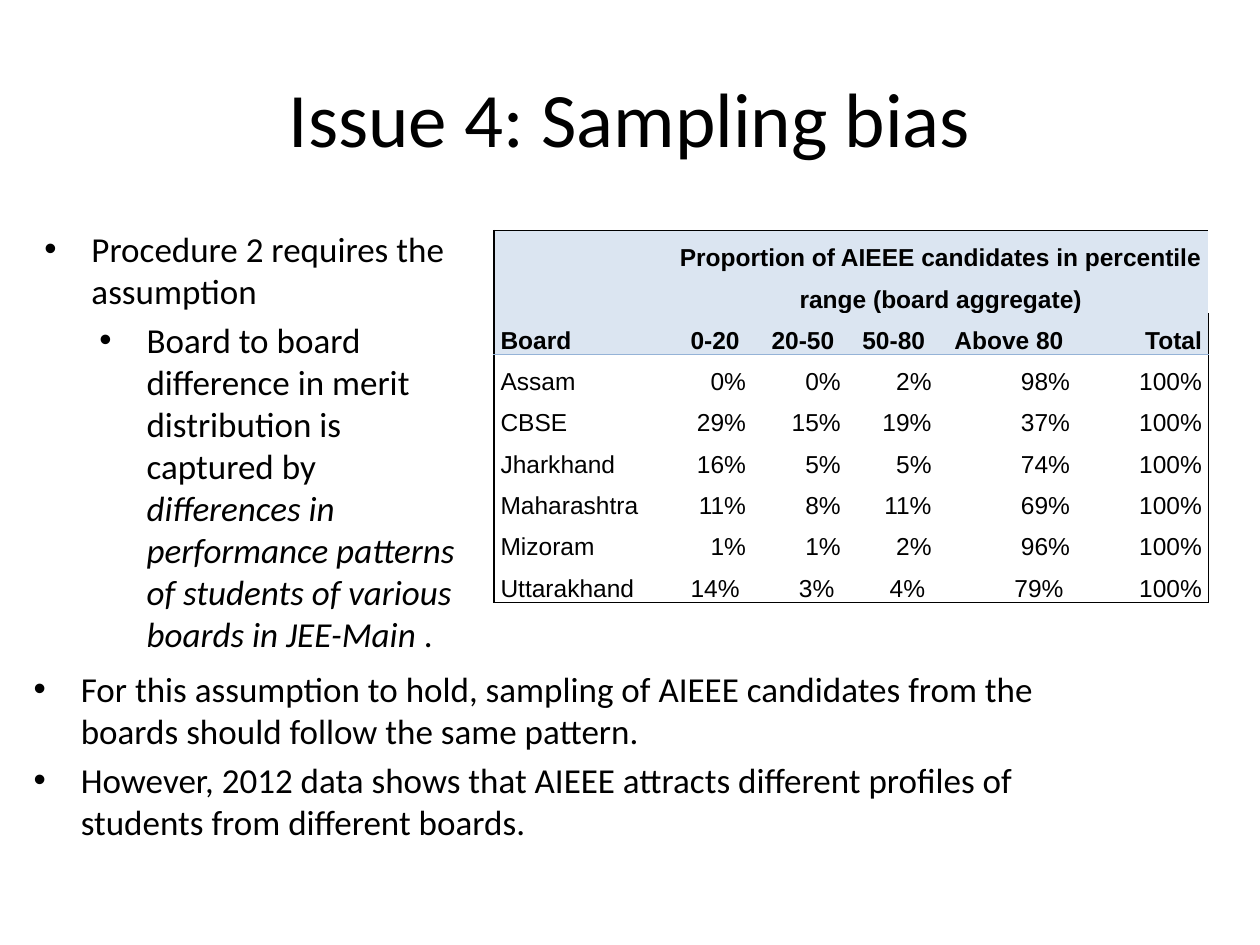
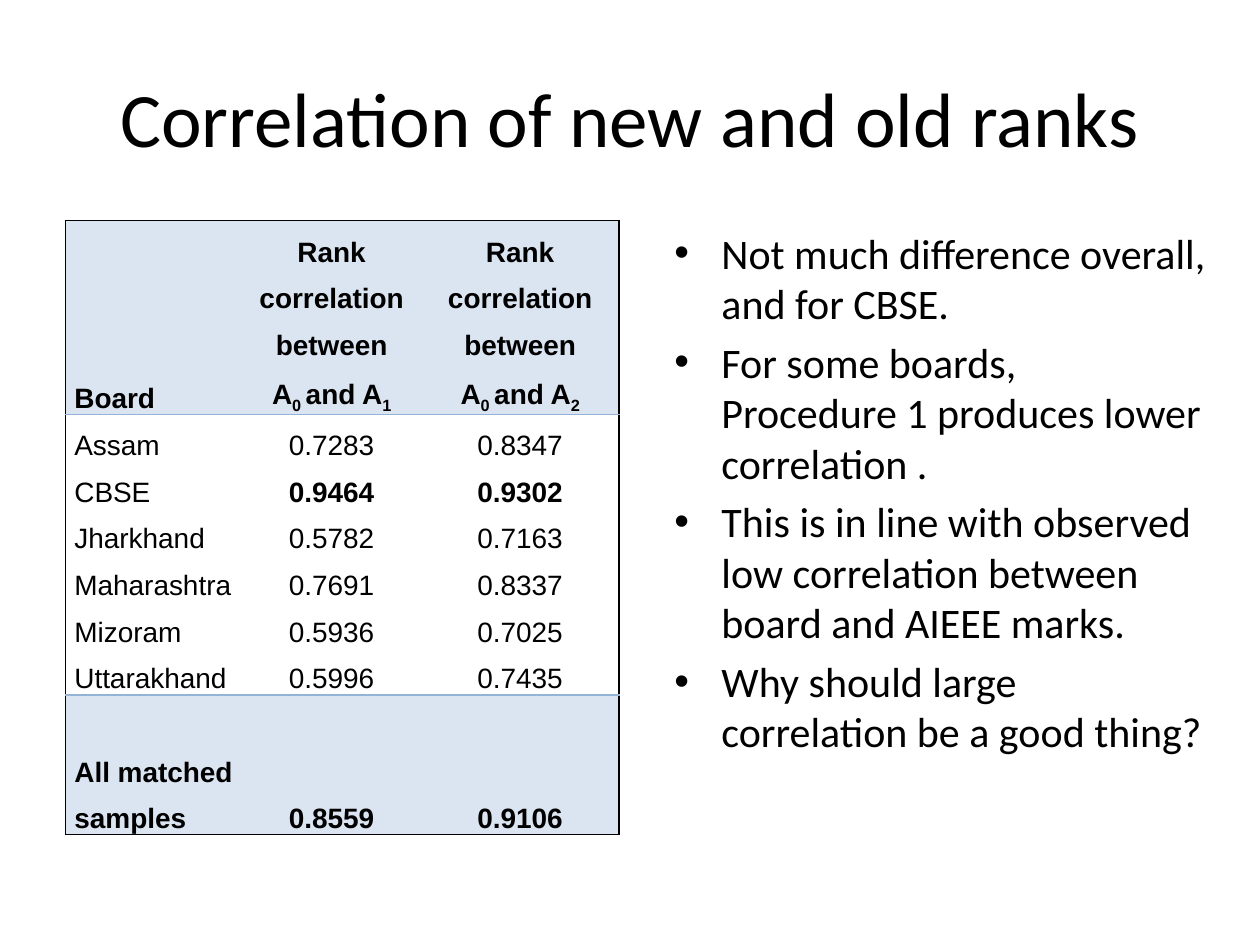
from lxml import etree
from pptx import Presentation
from pptx.dml.color import RGBColor
from pptx.enum.text import MSO_ANCHOR as Anchor, MSO_AUTO_SIZE as AutoSize, PP_ALIGN as Align
from pptx.oxml.ns import qn
from pptx.util import Cm, Pt

COLORS = {"text": "000000", "band": "DBE5F1", "frame": "000000", "rule": "95B3D7"}
TITLE_BOX = (1.27, 0.76, 22.86, 3.18)
TITLE_FONT = {"name": "Calibri", "size": Pt(44)}
INDENT = 0.95

BIAS_HEADER = ["Board", "0-20", "20-50", "50-80", "Above 80", "Total"]
BIAS_ROWS = [
    ["Assam", "0%", "0%", "2%", "98%", "100%"],
    ["CBSE", "29%", "15%", "19%", "37%", "100%"],
    ["Jharkhand", "16%", "5%", "5%", "74%", "100%"],
    ["Maharashtra", "11%", "8%", "11%", "69%", "100%"],
    ["Mizoram", "1%", "1%", "2%", "96%", "100%"],
    ["Uttarakhand", "14%", "3%", "4%", "79%", "100%"],
]
CORRELATION_ROWS = [
    ["Assam", "0.7283", "0.8347"],
    ["CBSE", "0.9464", "0.9302"],
    ["Jharkhand", "0.5782", "0.7163"],
    ["Maharashtra", "0.7691", "0.8337"],
    ["Mizoram", "0.5936", "0.7025"],
    ["Uttarakhand", "0.5996", "0.7435"],
    ["All matched samples", "0.8559", "0.9106"],
]


# Shared text helpers
def set_all(target, values):
    for key, value in values.items():
        setattr(target, key, value)


def add_runs(paragraph, parts, font):
    """Parts are a string or (text, format) pairs; a newline is a line break."""
    if isinstance(parts, str):
        parts = [(parts, {})]
    for text, extra in parts:
        for number, line in enumerate(text.split("\n")):
            if number:
                paragraph.add_line_break()
            run = paragraph.add_run()
            run.text = line
            style = {**font, **extra}
            baseline = style.pop("baseline", None)
            set_all(run.font, style)
            run.font.color.rgb = RGBColor.from_string(COLORS["text"])
            if baseline:
                run._r.get_or_add_rPr().set("baseline", baseline)


def place(shape, box):
    set_all(shape, dict(zip(("left", "top", "width", "height"), map(Cm, box))))


def add_title(slide, text):
    place(slide.shapes.title, TITLE_BOX)
    paragraph = slide.shapes.title.text_frame.paragraphs[0]
    paragraph.alignment = Align.CENTER
    add_runs(paragraph, text, TITLE_FONT)


def fill_bullets(shape, box, items, size):
    """Items are (level, parts) pairs."""
    place(shape, box)
    frame = shape.text_frame
    set_all(frame, {"word_wrap": True, "auto_size": AutoSize.NONE})
    for number, (level, parts) in enumerate(items):
        paragraph = frame.add_paragraph() if number else frame.paragraphs[0]
        set_all(paragraph, {"level": level, "alignment": Align.LEFT,
                            "space_before": Pt(size * 0.2)})
        properties = paragraph._p.get_or_add_pPr()
        properties.set("marL", str(Cm(INDENT + level * 1.11)))
        properties.set("indent", str(-Cm(INDENT)))
        etree.SubElement(properties, qn("a:buFont")).set("typeface", "Arial")
        etree.SubElement(properties, qn("a:buChar")).set("char", "•")
        add_runs(paragraph, parts, {"name": "Calibri", "size": Pt(size)})


# Shared table helpers
def set_borders(cell, edges):
    """Edges map L, R, T, B to a colour name; the other sides stay clear."""
    properties = cell._tc.get_or_add_tcPr()
    for position, side in enumerate("LRTB"):
        line = etree.Element(qn(f"a:ln{side}"), w=str(Pt(1)))
        if side in edges:
            solid = etree.SubElement(line, qn("a:solidFill"))
            etree.SubElement(solid, qn("a:srgbClr")).set("val", COLORS[edges[side]])
        else:
            etree.SubElement(line, qn("a:noFill"))
        properties.insert(position, line)


def add_grid(slide, left, top, widths, heights):
    graphic = slide.shapes.add_table(len(heights), len(widths), Cm(left), Cm(top),
                                     Cm(sum(widths)), Cm(sum(heights)))
    grid = graphic.table
    set_all(grid, {"first_row": False, "horz_banding": False})
    for column, width in zip(grid.columns, widths):
        column.width = Cm(width)
    for row, height in zip(grid.rows, heights):
        row.height = Cm(height)
    return grid


def fill_cell(cell, parts, font, align, inset):
    set_all(cell, {"vertical_anchor": Anchor.BOTTOM, "margin_top": 0, "margin_bottom": 0,
                   "margin_left": Cm(inset), "margin_right": Cm(inset)})
    paragraph = cell.text_frame.paragraphs[0]
    set_all(paragraph, {"alignment": align, "line_spacing": 1.5})
    if parts:
        add_runs(paragraph, parts, font)


def paint_grid(grid, band_rows, ruled_rows):
    """Frame the grid, shade the band rows and rule a line under the ruled rows."""
    last_row, last_column = len(grid.rows) - 1, len(grid.columns) - 1
    for r in range(last_row + 1):
        for c in range(last_column + 1):
            cell = grid.cell(r, c)
            if r in band_rows:
                cell.fill.solid()
                cell.fill.fore_color.rgb = RGBColor.from_string(COLORS["band"])
            else:
                cell.fill.background()
            conditions = {"L": (c == 0, "frame"), "R": (c == last_column, "frame"),
                          "T": (r == 0 or r - 1 in ruled_rows, "rule" if r else "frame"),
                          "B": (r == last_row or r in ruled_rows,
                                "frame" if r == last_row else "rule")}
            set_borders(cell, {side: color for side, (drawn, color) in conditions.items()
                               if drawn})


# Regions
def add_bias_table(slide, left, top):
    widths = [3.61, 1.47, 1.91, 1.83, 2.79, 2.79]
    grid = add_grid(slide, left, top, widths, [1.66] + [0.83] * 7)
    font = {"name": "Arial", "size": Pt(14), "bold": False}
    bold = {**font, "bold": True}
    grid.cell(0, 1).merge(grid.cell(0, 5))
    fill_cell(grid.cell(0, 1),
              "Proportion of AIEEE candidates in percentile range (board aggregate)",
              bold, Align.CENTER, 0.13)
    for r, values in enumerate([BIAS_HEADER] + BIAS_ROWS, start=1):
        for c, value in enumerate(values):
            flush = 1 < r < 7 and 0 < c < 5
            fill_cell(grid.cell(r, c), value, bold if r == 1 else font,
                      Align.RIGHT if c else Align.LEFT, 0 if flush else 0.13)
    paint_grid(grid, band_rows={0, 1}, ruled_rows={1})


def rank_heading(procedure):
    low = {"baseline": "-25000"}
    return [("Rank correlation between\nA", {}), ("0 ", low), ("and A", {}), (procedure, low)]


def add_correlation_table(slide, left, top):
    grid = add_grid(slide, left, top, [3.56, 3.61, 3.99], [3.91] + [0.94] * 6 + [2.82])
    header = ["Board", rank_heading("1"), rank_heading("2")]
    for r, values in enumerate([header] + CORRELATION_ROWS):
        for c, value in enumerate(values):
            strong = r in (0, 7) or (values[0] == "CBSE" and c > 0)
            fill_cell(grid.cell(r, c), value,
                      {"name": "Arial", "size": Pt(16), "bold": strong},
                      Align.CENTER if c else Align.LEFT, 0.18)
    paint_grid(grid, band_rows={0, 7}, ruled_rows={0, 6})


# Slides
def build_bias_slide(slide):
    add_title(slide, "Issue 4: Sampling bias")
    fill_bullets(slide.placeholders[1], (0.64, 4.45, 9.09, 8.69), [
        (0, "Procedure 2 requires the assumption"),
        (1, [("Board to board difference in merit distribution is captured by ", {}),
             ("differences in performance patterns of students of various boards in JEE-Main",
              {"italic": True}),
             (" .", {})]),
    ], 20)
    add_bias_table(slide, 9.96, 4.65)
    conclusions = slide.shapes.add_textbox(0, 0, 0, 0)
    fill_bullets(conclusions, (0.43, 13.34, 22.43, 4.01), [
        (0, "For this assumption to hold, sampling of AIEEE candidates from the boards "
            "should follow the same pattern."),
        (0, "However, 2012 data shows that AIEEE attracts different profiles of students "
            "from different boards."),
    ], 20)


def build_correlation_slide(slide):
    add_title(slide, "Correlation of new and old ranks")
    add_correlation_table(slide, 1.32, 4.45)
    fill_bullets(slide.placeholders[1], (13.34, 4.45, 11.23, 12.57), [
        (0, "Not much difference overall, and for CBSE."),
        (0, "For some boards,\nProcedure 1 produces lower correlation ."),
        (0, "This is in line with observed low correlation between board and AIEEE marks."),
        (0, "Why should large correlation be a good thing?"),
    ], 24)


def main():
    deck = Presentation()
    set_all(deck, {"slide_width": Cm(25.4), "slide_height": Cm(19.05)})
    for build in (build_bias_slide, build_correlation_slide):
        build(deck.slides.add_slide(deck.slide_layouts[1]))
    deck.save("out.pptx")


if __name__ == "__main__":
    main()
